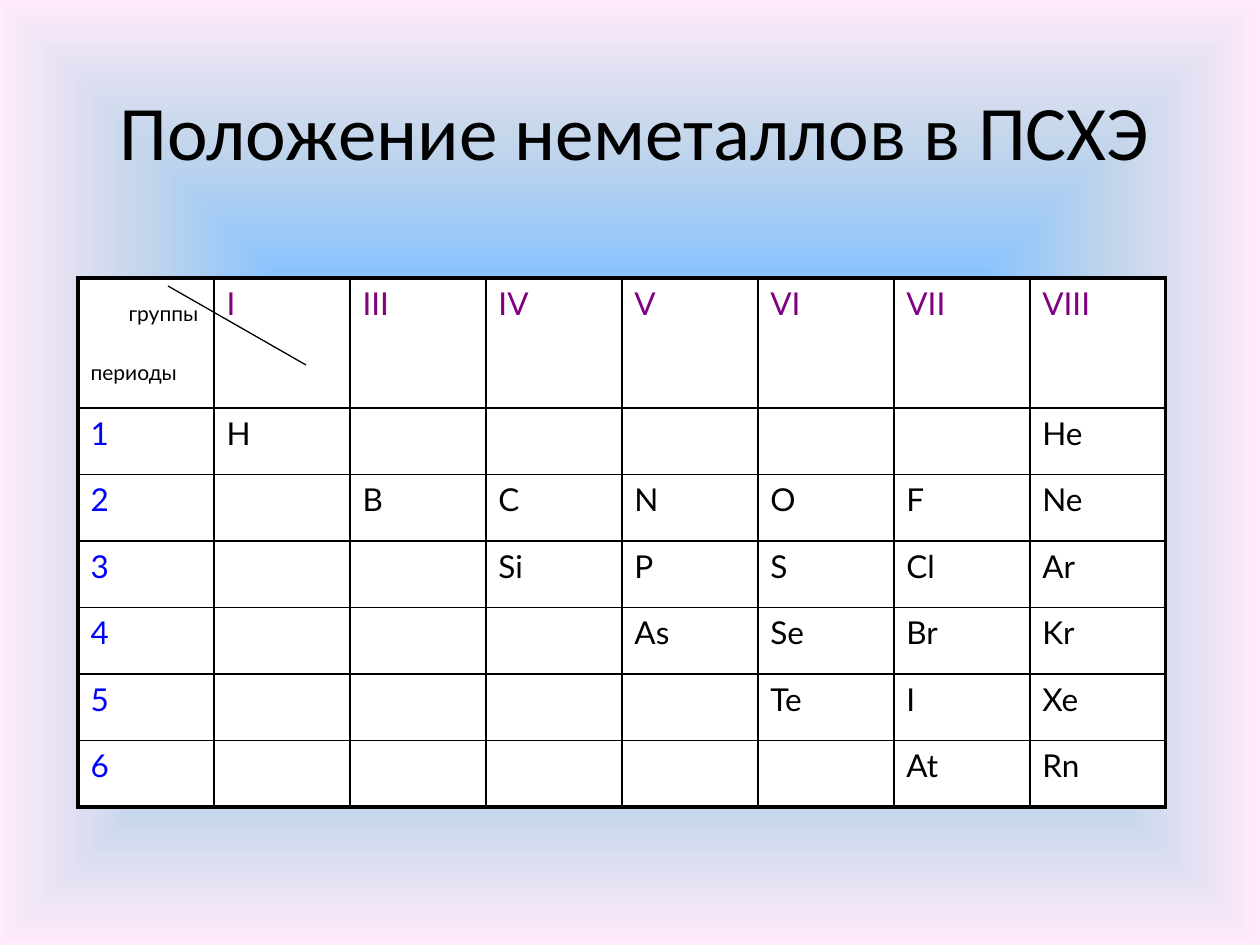
from pptx import Presentation
from pptx.dml.color import RGBColor as Rgb
from pptx.enum.shapes import MSO_CONNECTOR as Link
from pptx.enum.text import MSO_ANCHOR as Anchor, PP_ALIGN as Align
from pptx.oxml import parse_xml as to_xml
from pptx.oxml.ns import nsdecls as spaces
from pptx.util import Pt

SCALE = 914400 / 126
BLACK, WHITE, BLUE, PURPLE = "000000", "FFFFFF", "0000FF", "800080"
STOPS = [(0, "5E9EFF"), (40, "85C2FF"), (70, "C4D6EB"), (100, "FFEBFA")]
HEADS = ["I", "III", "IV", "V", "VI", "VII", "VIII"]
PERIODS = [
    ["H", "", "", "", "", "", "He"],
    ["", "B", "C", "N", "O", "F", "Ne"],
    ["", "", "Si", "P", "S", "Cl", "Ar"],
    ["", "", "", "As", "Se", "Br", "Kr"],
    ["", "", "", "", "Te", "I", "Xe"],
    ["", "", "", "", "", "At", "Rn"],
]


def px(num):
    return round(num * SCALE)


def color(code):
    return Rgb.from_string(code)


class Deck:
    face = "Lato"

    def __init__(self, wide, high):
        self.file = Presentation()
        self.file.slide_width = px(wide)
        self.file.slide_height = px(high)
        self.slide = self.file.slides.add_slide(self.file.slide_layouts[5])

    def back(self, stops):
        marks = "".join(
            f'<a:gs pos="{pos * 1000}"><a:srgbClr val="{code}"/></a:gs>'
            for pos, code in stops)
        self.slide.element.cSld.insert(0, to_xml(
            f'<p:bg {spaces("p", "a")}><p:bgPr><a:gradFill rotWithShape="1">'
            f'<a:gsLst>{marks}</a:gsLst><a:path path="shape">'
            '<a:fillToRect l="50000" t="50000" r="50000" b="50000"/></a:path>'
            '</a:gradFill><a:effectLst/></p:bgPr></p:bg>'))

    def style(self, para, size, code, face=None):
        for run in para.runs:
            run.font.name = face or self.face
            run.font.size = Pt(size)
            run.font.color.rgb = color(code)

    def title(self, text, left, top, wide, high):
        box = self.slide.shapes.title
        box.left, box.top, box.width, box.height = map(px, (left, top, wide, high))
        frame = box.text_frame
        frame.text = text
        frame.vertical_anchor = Anchor.MIDDLE
        para = frame.paragraphs[0]
        para.alignment = Align.CENTER
        self.style(para, 44, BLACK, "Calibri")

    def edge(self, cell, side, size):
        cell._tc.get_or_add_tcPr().append(to_xml(
            f'<a:ln{side} {spaces("a")} w="{Pt(size)}"><a:solidFill>'
            f'<a:srgbClr val="{BLACK}"/></a:solidFill></a:ln{side}>'))

    def table(self, data, left, top, wide, high, head):
        rows, cols = len(data), len(data[0])
        grid = self.slide.shapes.add_table(
            rows, cols, px(left), px(top), px(wide), px(high)).table
        grid.first_row = grid.horz_banding = False
        for col in grid.columns:
            col.width = px(wide / cols)
        for row, line in enumerate(data):
            grid.rows[row].height = px((high - head) / (rows - 1) if row else head)
            for col, text in enumerate(line):
                cell = grid.cell(row, col)
                outer = {"L": col == 0, "R": col == cols - 1,
                         "T": row == 0, "B": row == rows - 1}
                for side, thick in outer.items():
                    self.edge(cell, side, 2.25 if thick else 1)
                cell.fill.solid()
                cell.fill.fore_color.rgb = color(WHITE)
                cell.text_frame.text = text
                code = PURPLE if row == 0 else BLUE if col == 0 else BLACK
                self.style(cell.text_frame.paragraphs[0], 18, code)
        return grid

    def corner(self, cell, upper, lower):
        cell.vertical_anchor = Anchor.MIDDLE
        frame = cell.text_frame
        frame.text = f"{upper}\n{lower}"
        first, last = frame.paragraphs
        first._p.get_or_add_pPr().set("marL", str(px(38)))
        last.space_before = Pt(19)
        for para in frame.paragraphs:
            self.style(para, 12, BLACK)

    def line(self, *ends):
        link = self.slide.shapes.add_connector(Link.STRAIGHT, *map(px, ends))
        link.line.color.rgb = color(BLACK)
        link.line.width = Pt(0.75)
        link._element.spPr.append(to_xml(f'<a:effectLst {spaces("a")}/>'))


def main():
    deck = Deck(1260, 945)
    deck.back(STOPS)
    deck.title("Положение неметаллов в ПСХЭ", 98, 29, 1074, 202)
    data = [["", *HEADS]]
    data += [[str(num), *line] for num, line in enumerate(PERIODS, 1)]
    grid = deck.table(data, 78, 278, 1088, 529, 130)
    deck.corner(grid.cell(0, 0), "группы", "периоды")
    deck.line(168, 286, 306, 365)
    deck.file.save("out.pptx")


if __name__ == "__main__":
    main()
